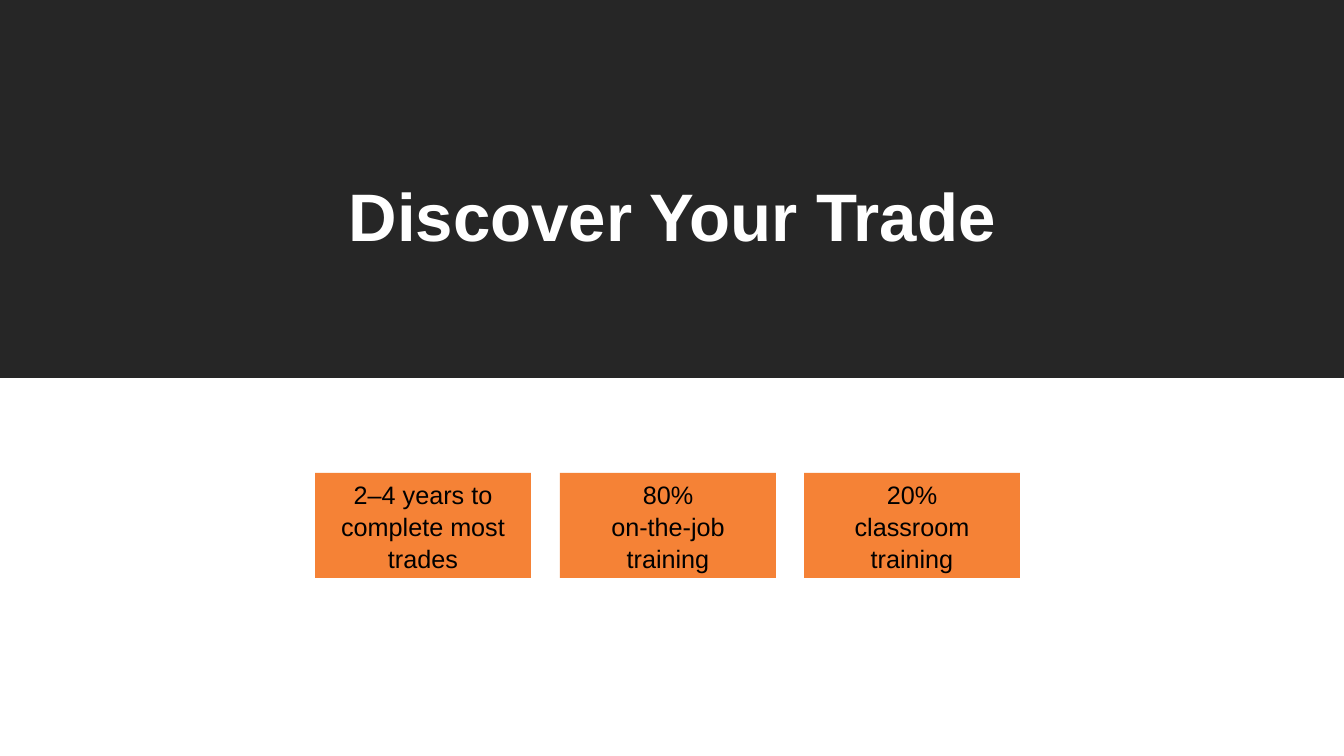
from typing import NamedTuple

from lxml import etree
from pptx import Presentation
from pptx.dml.color import RGBColor
from pptx.enum.shapes import MSO_SHAPE
from pptx.enum.text import MSO_ANCHOR, MSO_AUTO_SIZE, PP_ALIGN
from pptx.oxml.ns import qn
from pptx.util import Pt

SCALE = 914400 / 100.8
RECT = MSO_SHAPE.RECTANGLE
TOP, MIDDLE = MSO_ANCHOR.TOP, MSO_ANCHOR.MIDDLE
CENTER = PP_ALIGN.CENTER
GROW = MSO_AUTO_SIZE.SHAPE_TO_FIT_TEXT
COLORS = {"band": "000000", "title": "FFFFFF", "card": "F58236", "fact": "000000"}
FACTS = (
    "2–4 years to complete most trades",
    "80%\non-the-job\ntraining",
    "20%\nclassroom\ntraining",
)


class Box(NamedTuple):
    left: int
    top: int
    width: int
    height: int

    def emu(self) -> list[int]:
        return [round(side * SCALE) for side in self]


PAGE = Box(0, 0, 1344, 756)
BAND = Box(0, 0, PAGE.width, PAGE.height // 2)
TITLE = Box(98, 147, 1149, 123)
ROW = Box(315, 473, 705, 105)
CARD = 216


def rgb(name: str) -> RGBColor:
    return RGBColor.from_string(COLORS[name])


def block(slide, box: Box, color: str):
    shape = slide.shapes.add_shape(RECT, *box.emu())
    shape.shadow.inherit = False
    shape.fill.solid()
    shape.fill.fore_color.rgb = rgb(color)
    shape.line.fill.background()
    return shape


def write(shape, text: str, color: str, frame: dict, para: dict, font: dict) -> None:
    line = shape.text_frame.paragraphs[0]
    line.text = text
    targets = [(shape.text_frame, frame), (line, para)]
    targets += [(run.font, font) for run in line.runs]
    for target, values in targets:
        for key, value in values.items():
            setattr(target, key, value)
    for run in line.runs:
        run.font.color.rgb = rgb(color)


def fade(shape, percent: int) -> None:
    """Set the opacity of a solid fill."""
    tint = shape.fill._xPr.find(qn("a:solidFill"))[0]
    etree.SubElement(tint, qn("a:alpha"), val=str(percent * 1000))


def main() -> None:
    deck = Presentation()
    deck.slide_width, deck.slide_height = PAGE.emu()[2:]
    slide = deck.slides.add_slide(deck.slide_layouts[6])

    fade(block(slide, BAND, "band"), 85)
    write(
        slide.shapes.add_textbox(*TITLE.emu()), "Discover Your Trade", "title",
        {"word_wrap": True, "vertical_anchor": MIDDLE},
        {"alignment": CENTER, "line_spacing": 1.15},
        {"name": "Arial", "size": Pt(48), "bold": True},
    )

    step = (ROW.width - CARD) / (len(FACTS) - 1)
    for i, fact in enumerate(FACTS):
        box = Box(round(ROW.left + i * step), ROW.top, CARD, ROW.height)
        write(
            block(slide, box, "card"), fact, "fact",
            {"word_wrap": True, "vertical_anchor": TOP, "auto_size": GROW},
            {"alignment": CENTER, "line_spacing": 1.05},
            {"name": "Arial", "size": Pt(18)},
        )

    deck.save("out.pptx")


if __name__ == "__main__":
    main()
